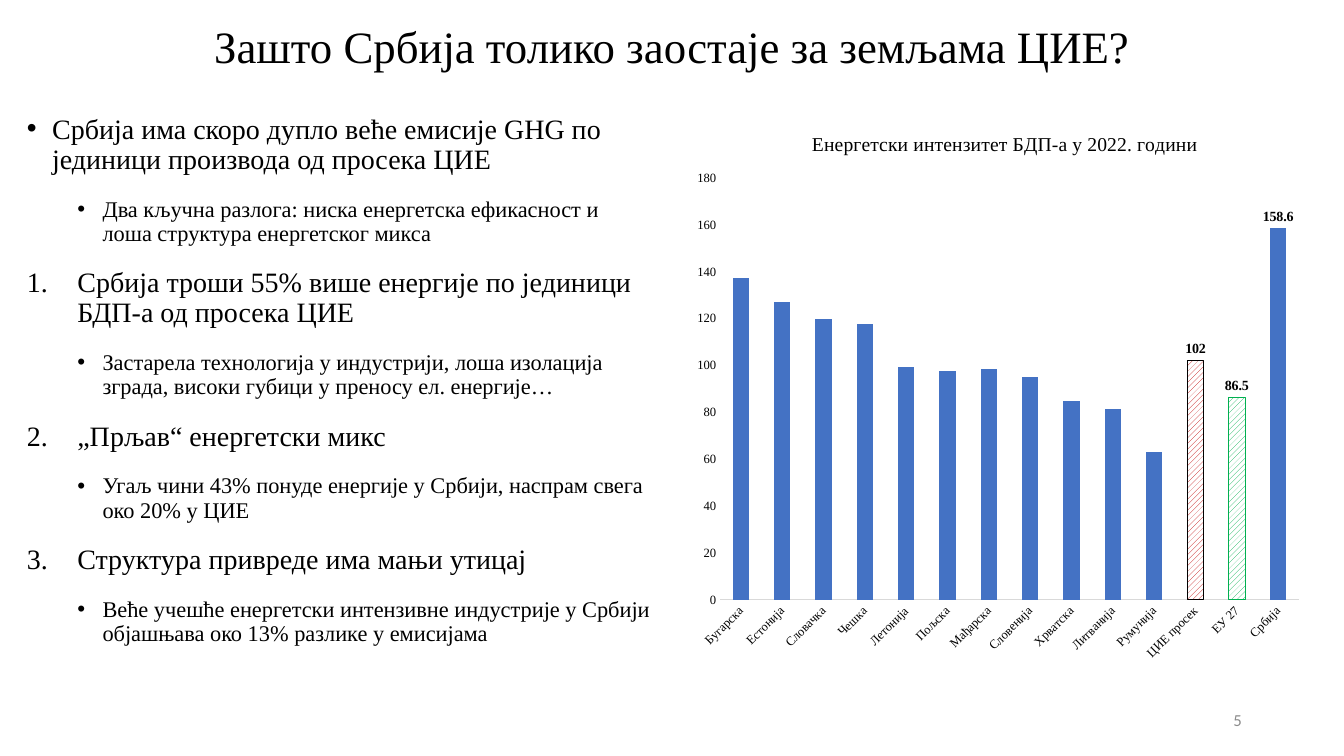
import pptx
import pptx.chart.data
import pptx.dml.color
import pptx.enum.chart
import pptx.enum.dml
import pptx.enum.text
import pptx.oxml
import pptx.oxml.ns
import pptx.util
from pptx.util import Cm

COLORS = {"text": "000000", "number": "8C8C8C", "bar": "4472C4", "axis": "D9D9D9",
          "white": "FFFFFF", "region": "C00000", "union": "00B050"}
SERIF = "Times New Roman"

# Main points and their explanations: level, marker, text
POINTS = [
    (0, "•", "Србија има скоро дупло веће емисије GHG по јединици производа од просека ЦИЕ"),
    (1, "•", "Два кључна разлога: ниска енергетска ефикасност и лоша структура енергетског микса"),
    (0, "1.", "Србија троши 55% више енергије по јединици БДП-а од просека ЦИЕ"),
    (1, "•", "Застарела технологија у индустрији, лоша изолација зграда, "
             "високи губици у преносу ел. енергије…"),
    (0, "1.", "„Прљав“ енергетски микс"),
    (1, "•", "Угаљ чини 43% понуде енергије у Србији, наспрам свега око 20% у ЦИЕ"),
    (0, "1.", "Структура привреде има мањи утицај"),
    (1, "•", "Веће учешће енергетски интензивне индустрије у Србији "
             "објашњава око 13% разлике у емисијама"),
]

INTENSITY = {
    "Бугарска": 137.5, "Естонија": 127.1, "Словачка": 119.8, "Чешка": 117.7,
    "Летонија": 99.4, "Пољска": 97.5, "Мађарска": 98.5, "Словенија": 95.1,
    "Хрватска": 85.0, "Литванија": 81.3, "Румунија": 62.9,
    "ЦИЕ просек": 102.0, "ЕУ 27": 86.5, "Србија": 158.6,
}
HATCHED = {"ЦИЕ просек": ("region", "text"), "ЕУ 27": ("union", "union")}
LABELLED = ["ЦИЕ просек", "ЕУ 27", "Србија"]


def rgb(name):
    return pptx.dml.color.RGBColor.from_string(COLORS[name])


def chart_xml(xml):
    return pptx.oxml.parse_xml(xml.replace(">", f" {pptx.oxml.ns.nsdecls('c')}>", 1))


def manual_layout(x, y, size=None):
    """Layout element in fractions of the chart; size also fixes the inner plot area."""
    target = '<c:layoutTarget val="inner"/>' if size else ""
    extent = f'<c:w val="{size[0]}"/><c:h val="{size[1]}"/>' if size else ""
    return chart_xml(
        f'<c:layout><c:manualLayout>{target}<c:xMode val="edge"/><c:yMode val="edge"/>'
        f'<c:x val="{x}"/><c:y val="{y}"/>{extent}</c:manualLayout></c:layout>')


class SlideBuilder:
    def __init__(self, slide, font=SERIF):
        self.slide = slide
        self.font = font

    def style(self, font, size, color="text", bold=False, name=None):
        font.name = name or self.font
        font.size = pptx.util.Pt(size)
        font.bold = bold
        font.color.rgb = rgb(color)

    def frame(self, left, top, width, height, anchor="TOP"):
        box = self.slide.shapes.add_textbox(Cm(left), Cm(top), Cm(width), Cm(height))
        box.text_frame.word_wrap = True
        box.text_frame.vertical_anchor = pptx.enum.text.MSO_ANCHOR[anchor]
        return box.text_frame

    def line(self, place, text, size, align, **style):
        paragraph = self.frame(*place, anchor="MIDDLE").paragraphs[0]
        paragraph.alignment = pptx.enum.text.PP_ALIGN[align]
        paragraph.line_spacing = 0.9
        run = paragraph.add_run()
        run.text = text
        self.style(run.font, size, **style)

    def outline(self, place, points):
        frame = self.frame(*place)
        for index, (level, marker, text) in enumerate(points):
            paragraph = frame.add_paragraph() if index else frame.paragraphs[0]
            paragraph.level = level
            paragraph.line_spacing = 0.9
            paragraph.space_before = paragraph.space_after = pptx.util.Pt(8)
            self.mark(paragraph, level, marker)
            run = paragraph.add_run()
            run.text = text
            self.style(run.font, 16 if level else 20)

    def mark(self, paragraph, level, marker):
        numbered = marker == "1."
        hanging = Cm(1.27 if numbered else 0.635)
        properties = paragraph._p.get_or_add_pPr()
        properties.set("marL", str(hanging + level * Cm(1.27)))
        properties.set("indent", str(-hanging))
        font = "+mj-lt" if numbered else "Arial"
        bullet = 'buAutoNum type="arabicPeriod"' if numbered else f'buChar char="{marker}"'
        for tag in (f'buFont typeface="{font}"', bullet):
            properties.append(pptx.oxml.parse_xml(f"<a:{tag} {pptx.oxml.ns.nsdecls('a')}/>"))

    def column_chart(self, place, title, values):
        data = pptx.chart.data.CategoryChartData()
        data.categories = list(values)
        data.add_series("Енергетски интензитет", list(values.values()))
        chart = self.slide.shapes.add_chart(
            pptx.enum.chart.XL_CHART_TYPE.COLUMN_CLUSTERED, *map(Cm, place), data).chart
        self.style(chart.font, 10)
        chart.has_legend = False
        self.chart_title(chart, title)
        self.axes(chart)
        plot = chart.plots[0]
        plot.gap_width = 150
        plot.vary_by_categories = False
        self.columns(plot.series[0], list(values))

    def chart_title(self, chart, title):
        chart.has_title = True
        run = chart.chart_title.text_frame.paragraphs[0].add_run()
        run.text = title
        self.style(run.font, 14)
        chart.chart_title.include_in_layout = False
        for parent, layout in (
                (chart._chartSpace.chart.find(pptx.oxml.ns.qn("c:title")),
                 manual_layout(0.2, 0.03)),
                (chart._chartSpace.chart.plotArea,
                 manual_layout(0.06, 0.12, (0.92, 0.75)))):
            for old in parent.findall(pptx.oxml.ns.qn("c:layout")):
                parent.remove(old)
            parent.insert(1 if parent.tag.endswith("title") else 0, layout)

    def axes(self, chart):
        for axis in (chart.category_axis, chart.value_axis):
            axis.has_major_gridlines = False
            axis.major_tick_mark = pptx.enum.chart.XL_TICK_MARK.NONE
            axis.minor_tick_mark = pptx.enum.chart.XL_TICK_MARK.NONE
            self.style(axis.tick_labels.font, 9)
        countries, scale = chart.category_axis, chart.value_axis
        countries.format.line.color.rgb = rgb("axis")
        countries.format.line.width = pptx.util.Pt(0.75)
        body = countries._element.find(pptx.oxml.ns.qn("c:txPr")).bodyPr
        body.set("rot", str(-45 * 60000))
        body.set("vert", "horz")
        scale.format.line.fill.background()
        scale.minimum_scale, scale.maximum_scale, scale.major_unit = 0, 180, 20
        scale.tick_labels.number_format = "0"
        scale.tick_labels.number_format_is_linked = False

    def columns(self, series, names):
        series.format.fill.solid()
        series.format.fill.fore_color.rgb = rgb("bar")
        series.invert_if_negative = False
        series.data_labels.show_value = False
        for name, (hatch, border) in HATCHED.items():
            look = series.points[names.index(name)].format
            look.fill.patterned()
            look.fill.pattern = pptx.enum.dml.MSO_PATTERN.WIDE_UPWARD_DIAGONAL
            look.fill.fore_color.rgb = rgb(hatch)
            look.fill.back_color.rgb = rgb("white")
            look.line.color.rgb = rgb(border)
            look.line.width = pptx.util.Pt(0.75)
        for name in LABELLED:
            label = series.points[names.index(name)].data_label
            self.style(label.font, 10, bold=True)
            label.position = pptx.enum.chart.XL_LABEL_POSITION.OUTSIDE_END


def main():
    deck = pptx.Presentation()
    deck.slide_width, deck.slide_height = Cm(33.87), Cm(19.05)
    builder = SlideBuilder(deck.slides.add_slide(deck.slide_layouts[6]))

    # Heading
    builder.line((1.7, 0.38, 30.48, 1.73),
                 "Зашто Србија толико заостаје за земљама ЦИЕ?", 32, "CENTER")
    # Reasons
    builder.outline((0.43, 2.77, 16.28, 15.24), POINTS)
    # Energy intensity by country
    builder.column_chart((17.2, 2.79, 15.85, 14.17),
                         "Енергетски интензитет БДП-а у 2022. години", INTENSITY)
    # Slide number
    builder.line((23.93, 17.65, 7.62, 1.02), "5", 12, "RIGHT", color="number", name="Calibri")

    deck.save("out.pptx")


if __name__ == "__main__":
    main()
